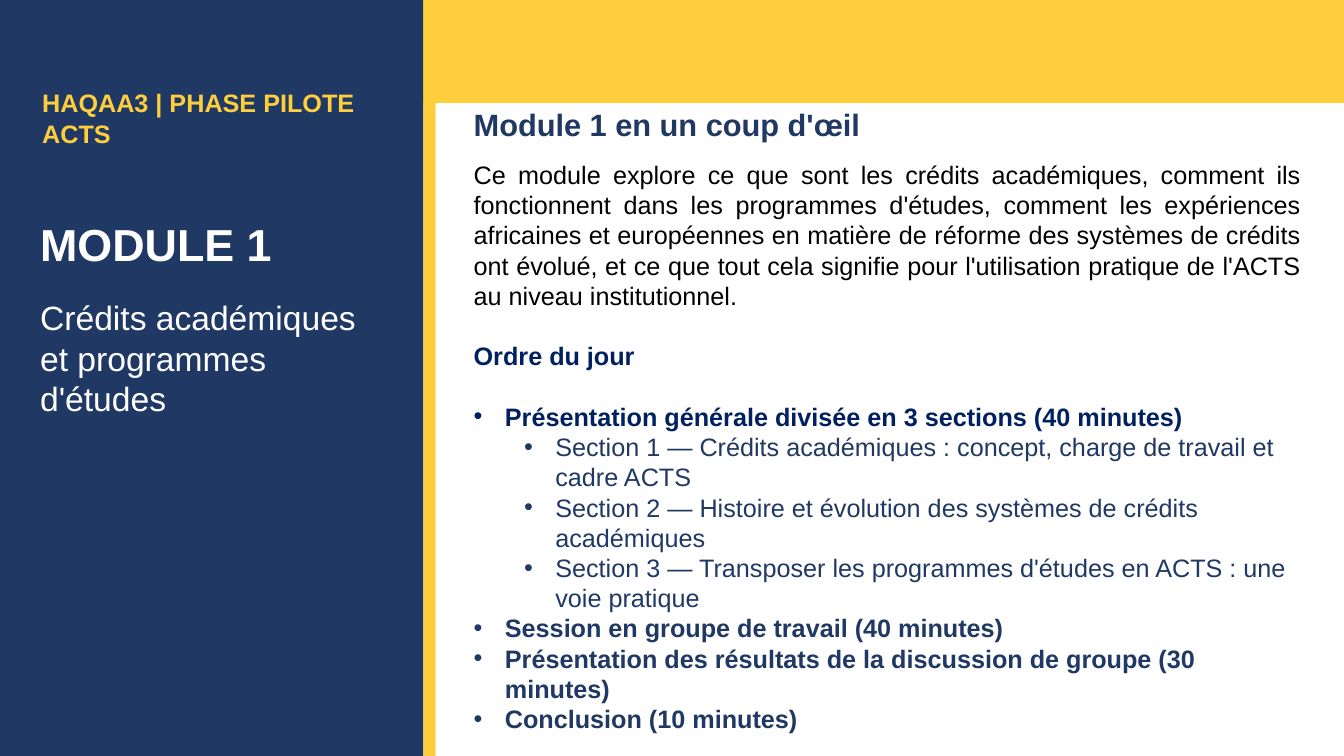
import pptx
import pptx.dml.color
import pptx.enum.shapes
import pptx.enum.text
import pptx.util
import lxml.etree

NAVY = "1F3864"
DEEP_NAVY = "002060"
GOLD = "FFCE3C"
WHITE = "FFFFFF"
BLACK = "000000"

SLIDE_WIDTH = pptx.util.Inches(13.33)
SLIDE_HEIGHT = pptx.util.Inches(7.5)
COLUMNS = 133.3
ROWS = 75
LEFT = pptx.enum.text.PP_ALIGN.LEFT
JUSTIFY = pptx.enum.text.PP_ALIGN.JUSTIFY


def color(value):
    return pptx.dml.color.RGBColor.from_string(value)


def add_bullet(paragraph, level):
    paragraph.level = level
    properties = paragraph._p.get_or_add_pPr()
    hanging = pptx.util.Inches(0.31)
    properties.set("marL", str(hanging + level * pptx.util.Inches(0.5)))
    properties.set("indent", str(-hanging))
    namespace = pptx.oxml.ns.qn
    font = lxml.etree.SubElement(properties, namespace("a:buFont"))
    font.set("typeface", "Arial")
    mark = lxml.etree.SubElement(properties, namespace("a:buChar"))
    mark.set("char", "•")


def write(paragraph, text, size=18, fill=NAVY, bold=False, align=LEFT, before=0, level=None):
    paragraph.text = text
    if level is not None:
        add_bullet(paragraph, level)
    paragraph.alignment = align
    if before:
        paragraph.space_before = pptx.util.Pt(before)
    for run in paragraph.runs:
        run.font.name = "Arial"
        run.font.size = pptx.util.Pt(size)
        run.font.bold = bold
        run.font.color.rgb = color(fill)


class ModuleSlide:
    def __init__(self, presentation):
        self.slide = presentation.slides.add_slide(presentation.slide_layouts[6])
        self.column = SLIDE_WIDTH / COLUMNS
        self.row = SLIDE_HEIGHT / ROWS

    def place(self, column, row, columns, rows):
        return (
            round(column * self.column),
            round(row * self.row),
            round(columns * self.column),
            round(rows * self.row),
        )

    def band(self, *cells, fill):
        band = self.slide.shapes.add_shape(
            pptx.enum.shapes.MSO_SHAPE.RECTANGLE, *self.place(*cells)
        )
        band.shadow.inherit = False
        band.fill.solid()
        band.fill.fore_color.rgb = color(fill)
        band.line.fill.background()

    def text(self, *cells, paragraphs):
        frame = self.slide.shapes.add_textbox(*self.place(*cells)).text_frame
        frame.word_wrap = True
        frame.auto_size = pptx.enum.text.MSO_AUTO_SIZE.SHAPE_TO_FIT_TEXT
        for index, (content, style) in enumerate(paragraphs):
            paragraph = frame.add_paragraph() if index else frame.paragraphs[0]
            write(paragraph, content, **style)


def main():
    presentation = pptx.Presentation()
    presentation.slide_width = SLIDE_WIDTH
    presentation.slide_height = SLIDE_HEIGHT
    module = ModuleSlide(presentation)

    module.band(0, 0, COLUMNS, 10.2, fill=GOLD)
    module.band(0, 0, 42, ROWS, fill=NAVY)
    module.band(42, 0, 1.2, ROWS, fill=GOLD)

    module.text(3.2, 8.2, 36, 7.1, paragraphs=[
        ("HAQAA3 | PHASE PILOTE ACTS", dict(fill=GOLD, bold=True)),
    ])
    module.text(3, 21, 36, 7, paragraphs=[
        ("MODULE 1", dict(size=32, fill=WHITE, bold=True)),
    ])
    module.text(3, 29, 36, 9.1, paragraphs=[
        ("Crédits académiques\vet programmes d'études", dict(size=24, fill=WHITE)),
    ])
    module.text(46, 10, 84, 5, paragraphs=[
        ("Module 1 en un coup d'œil", dict(size=22, bold=True)),
    ])

    heading = dict(fill=DEEP_NAVY, bold=True, align=JUSTIFY, before=21.6)
    section = dict(level=1)
    step = dict(bold=True, level=0)
    module.text(46, 15.3, 84, 49.5, paragraphs=[
        (
            "Ce module explore ce que sont les crédits académiques, comment ils "
            "fonctionnent dans les programmes d'études, comment les expériences "
            "africaines et européennes en matière de réforme des systèmes de crédits "
            "ont évolué, et ce que tout cela signifie pour l'utilisation pratique de "
            "l'ACTS au niveau institutionnel.",
            dict(fill=BLACK, align=JUSTIFY),
        ),
        ("Ordre du jour", heading),
        ("Présentation générale divisée en 3 sections (40 minutes)", dict(heading, level=0)),
        ("Section 1 — Crédits académiques : concept, charge de travail et cadre ACTS", section),
        ("Section 2 — Histoire et évolution des systèmes de crédits académiques", section),
        ("Section 3 — Transposer les programmes d'études en ACTS : une voie pratique", section),
        ("Session en groupe de travail (40 minutes)", step),
        ("Présentation des résultats de la discussion de groupe (30 minutes)", step),
        ("Conclusion (10 minutes)", step),
    ])

    presentation.save("out.pptx")


if __name__ == "__main__":
    main()
